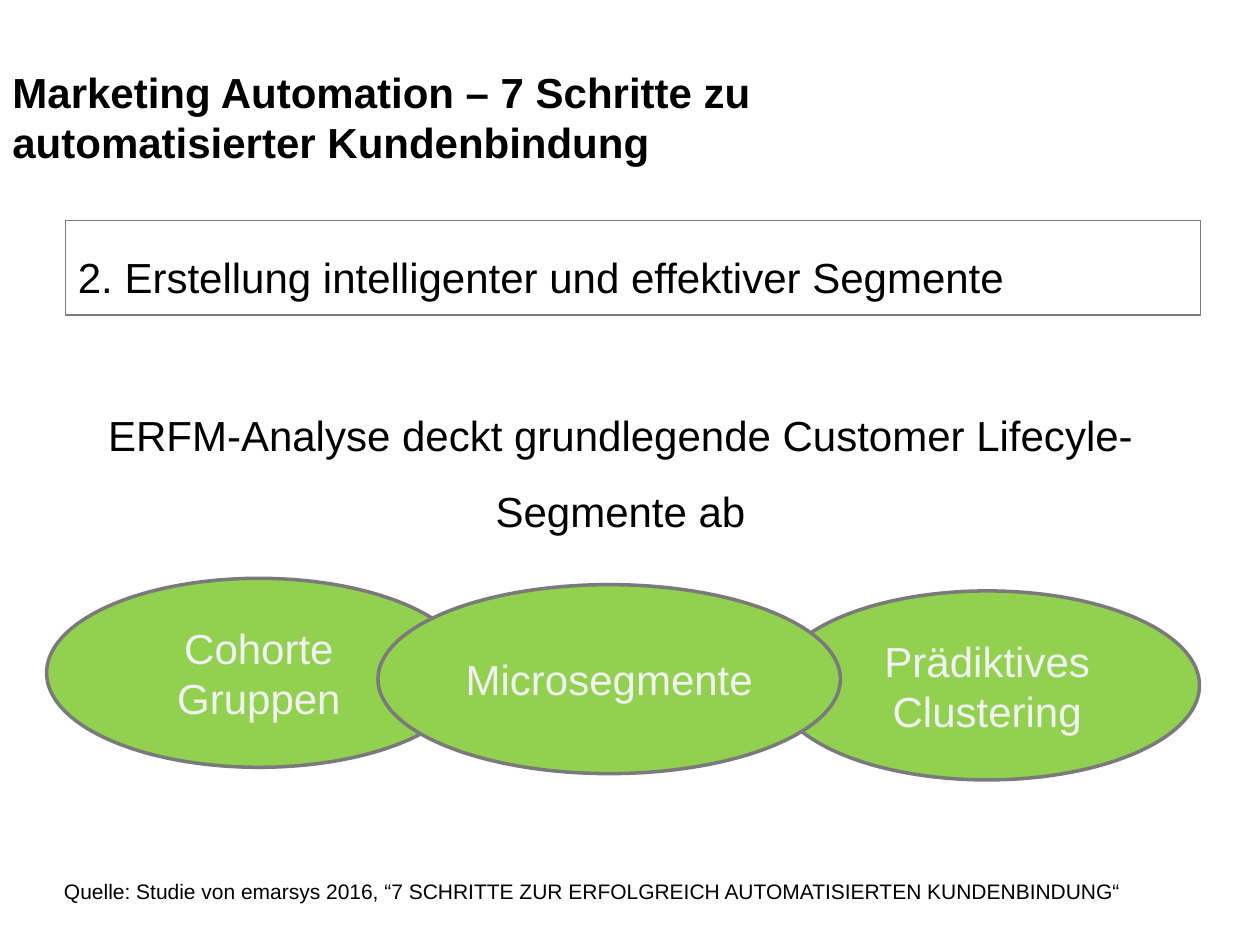
from pptx import Presentation
from pptx.dml.color import RGBColor
from pptx.enum.shapes import MSO_SHAPE
from pptx.enum.text import MSO_ANCHOR, PP_ALIGN
from pptx.util import Inches, Pt

RECT, OVAL = MSO_SHAPE.RECTANGLE, MSO_SHAPE.OVAL
TOP, MIDDLE = MSO_ANCHOR.TOP, MSO_ANCHOR.MIDDLE
LEFT, CENTER = PP_ALIGN.LEFT, PP_ALIGN.CENTER

COLORS = {"text": "000000", "label": "F2F2F2", "green": "92D050", "grey": "7A7A7A"}


def rgb(name):
    return RGBColor.from_string(COLORS[name])


def write(sp, text, color="text", anchor=TOP, wrap=True, align=LEFT,
          spacing=1.0, size=24, bold=False):
    tf = sp.text_frame
    tf.word_wrap = wrap
    tf.vertical_anchor = anchor
    p = tf.paragraphs[0]
    p.alignment = align
    p.line_spacing = spacing
    r = p.add_run()
    r.text = text
    for name, value in {"name": "Arial", "size": Pt(size), "bold": bold}.items():
        setattr(r.font, name, value)
    r.font.color.rgb = rgb(color)


def add_text(s, box, text, **fmt):
    sp = s.shapes.add_textbox(*map(Inches, box))
    write(sp, text, **fmt)


def add_outlined(s, kind, box, line_width, fill=None):
    sp = s.shapes.add_shape(kind, *map(Inches, box))
    sp.shadow.inherit = False
    if fill:
        sp.fill.solid()
        sp.fill.fore_color.rgb = rgb(fill)
    else:
        sp.fill.background()
    sp.line.color.rgb = rgb("grey")
    sp.line.width = Pt(line_width)
    return sp


def add_step(s, box, text):
    sp = add_outlined(s, RECT, box, 0.75)
    write(sp, text, spacing=1.5)


def add_segments(s, box):
    """Outer ellipses step down to the right; the middle one lies on top."""
    left, top, width, height = box
    outer, middle, step = 3.37, 3.67, 0.05
    segments = [
        ("Cohorte Gruppen", 0, outer, 0),
        ("Prädiktives Clustering", width - outer, outer, 2 * step),
        ("Microsegmente", 2.63, middle, step),
    ]
    for text, dx, w, dy in segments:
        sp = add_outlined(s, OVAL, (left + dx, top + dy, w, height), 2, "green")
        write(sp, text, color="label", anchor=MIDDLE, align=CENTER)


def main():
    prs = Presentation()
    prs.slide_width, prs.slide_height = Inches(10), Inches(7.5)
    s = prs.slides.add_slide(prs.slide_layouts[6])

    # Title
    add_text(s, (0, 0.47, 6.81, 0.91),
             "Marketing Automation – 7 Schritte zu automatisierter Kundenbindung",
             anchor=MIDDLE, bold=True)
    # Source line
    add_text(s, (0.41, 6.92, 8.67, 0.3),
             "Quelle: Studie von emarsys 2016, “7 SCHRITTE ZUR ERFOLGREICH "
             "AUTOMATISIERTEN KUNDENBINDUNG“", size=12, wrap=False)
    # Step heading and statement
    add_step(s, (0.52, 1.75, 9.01, 0.75),
             "2. Erstellung intelligenter und effektiver Segmente")
    add_text(s, (0.41, 3, 9.03, 0.92),
             "ERFM-Analyse deckt grundlegende Customer Lifecyle-Segmente ab",
             align=CENTER, spacing=1.5)
    # Overlapping segments
    add_segments(s, (0.37, 4.59, 9.15, 1.5))

    prs.save("out.pptx")


if __name__ == "__main__":
    main()
